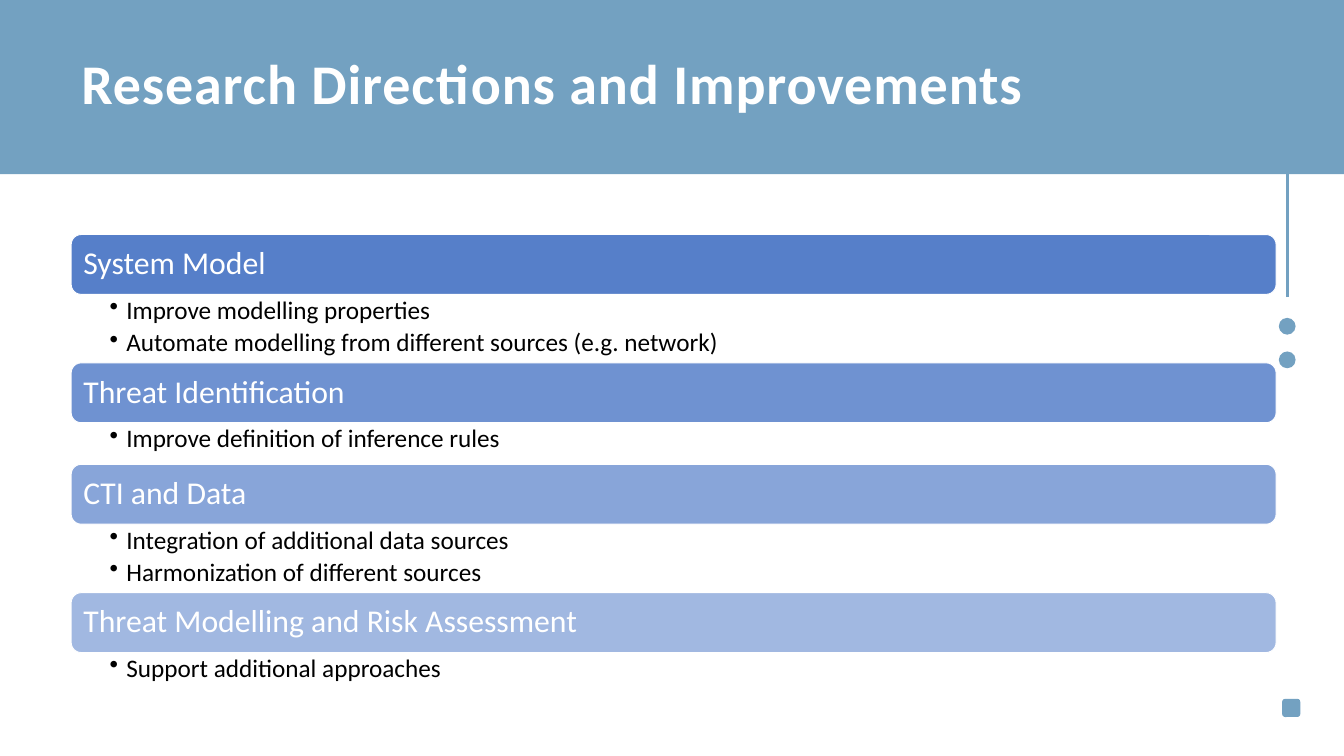
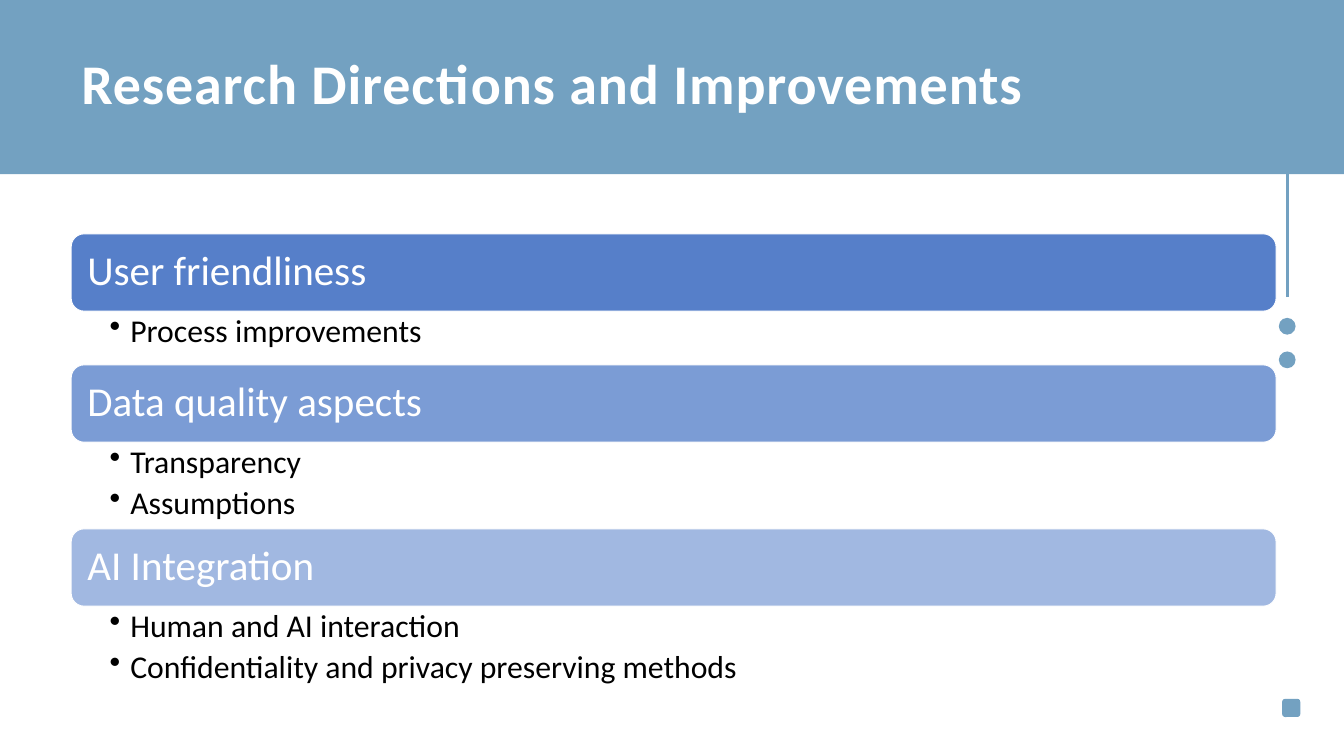
from dataclasses import dataclass

from lxml.etree import SubElement
from pptx import Presentation
from pptx.dml.color import RGBColor as RGB
from pptx.enum.shapes import MSO_CONNECTOR as CONN, MSO_SHAPE as SHAPE
from pptx.enum.text import MSO_ANCHOR as ANCHOR
from pptx.oxml.ns import qn
from pptx.util import Inches, Pt


@dataclass(frozen=True)
class Theme:
    font: str = "Calibri"
    accent: RGB = RGB(0x73, 0xA1, 0xC1)
    bar: RGB = RGB(0x44, 0x72, 0xC4)
    white: RGB = RGB(0xFF, 0xFF, 0xFF)
    black: RGB = RGB(0, 0, 0)
    title: int = 60


T = Theme()
LEFT, WIDTH = 1.06, 17.93
TITLE = "Research Directions and Improvements"

SLIDES = [
    dict(
        top=3.49, bar=0.89, head=34, body=27, edge=0.04, inset=0.14,
        body_inset=(0.57, 0.05, 0.26, 0.05), indent=0.25, heights={1: 0.62, 2: 1.02},
        sections=[
            ("System Model", ["Improve modelling properties",
                              "Automate modelling from different sources (e.g. network)"]),
            ("Threat Identification", ["Improve definition of inference rules"]),
            ("CTI and Data", ["Integration of additional data sources",
                              "Harmonization of different sources"]),
            ("Threat Modelling and Risk Assessment", ["Support additional approaches"]),
        ],
    ),
    dict(
        top=3.48, bar=1.15, head=44, body=34, edge=0.06, inset=0.18,
        body_inset=(0.57, 0.06, 0.34, 0.06), indent=0.31, heights={1: 0.8, 2: 1.29},
        sections=[
            ("User friendliness", ["Process improvements"]),
            ("Data quality aspects", ["Transparency", "Assumptions"]),
            ("AI Integration", ["Human and AI interaction",
                                "Confidentiality and privacy preserving methods"]),
        ],
    ),
]


def add_text(slide, lines, at, *, size, color, inset, after, anchor=ANCHOR.TOP,
             bold=False, spacing=None, indent=None):
    tf = slide.shapes.add_textbox(*map(Inches, at)).text_frame
    tf.word_wrap = True
    tf.vertical_anchor = anchor
    tf.margin_left, tf.margin_top, tf.margin_right, tf.margin_bottom = map(Inches, inset)
    for i, line in enumerate(lines):
        p = tf.paragraphs[0] if i == 0 else tf.add_paragraph()
        if indent:
            p.level = 1
            pPr = p._p.get_or_add_pPr()
            pPr.set("marL", str(Inches(indent)))
            pPr.set("indent", str(-Inches(indent)))
            SubElement(pPr, qn("a:buChar"), char="•")
        p.line_spacing = 0.9
        p.space_after = Pt(after)
        r = p.add_run()
        r.text = line
        r.font.name, r.font.size, r.font.bold = T.font, Pt(size), bold
        r.font.color.rgb = color
        if spacing:
            r._r.get_or_add_rPr().set("spc", str(spacing * 100))


def add_shape(slide, kind, at, color, *, alpha=None, line=None):
    s = slide.shapes.add_shape(kind, *map(Inches, at))
    s.shadow.inherit = False
    s.fill.solid()
    s.fill.fore_color.rgb = color
    if alpha is not None:
        clr = s._element.spPr.find(".//" + qn("a:srgbClr"))
        SubElement(clr, qn("a:alpha"), val=str(round(alpha * 1000)))
    if line is None:
        s.line.fill.background()
    else:
        s.line.color.rgb = line
        s.line.width = Pt(1)
    return s


prs = Presentation()
prs.slide_width, prs.slide_height = Inches(20), Inches(11.25)

for spec_ in SLIDES:
    slide = prs.slides.add_slide(prs.slide_layouts[6])
    y, bar, edge = spec_["top"], spec_["bar"], spec_["edge"]
    last = len(spec_["sections"]) - 1

    for i, (heading, points) in enumerate(spec_["sections"]):
        add_shape(slide, SHAPE.ROUNDED_RECTANGLE, (LEFT, y, WIDTH, bar), T.bar,
                  alpha=90 - 40 * i / last, line=T.white)
        add_text(slide, [heading], (LEFT + edge, y + edge, WIDTH - 2 * edge, bar - 2 * edge),
                 size=spec_["head"], color=T.white, inset=[spec_["inset"]] * 4,
                 after=0.35 * spec_["head"], anchor=ANCHOR.MIDDLE)
        y += bar
        height = spec_["heights"][len(points)]
        add_text(slide, points, (LEFT, y, WIDTH, height), size=spec_["body"], color=T.black,
                 inset=spec_["body_inset"], after=0.2 * spec_["body"], indent=spec_["indent"])
        y += height

    add_shape(slide, SHAPE.ROUNDED_RECTANGLE, (19.08, 10.4, 0.27, 0.27), T.accent)
    add_shape(slide, SHAPE.RECTANGLE, (0, 0, 20, 2.59), T.accent)
    add_text(slide, [TITLE], (LEFT, 0.57, 16.48, 1.44), size=T.title, color=T.white,
             inset=(0.15, 0.07, 0.15, 0.07), after=9, anchor=ANCHOR.MIDDLE, bold=True, spacing=1)

    rule = slide.shapes.add_connector(CONN.STRAIGHT, *map(Inches, (19.16, 4.42, 19.16, 0)))
    rule.line.color.rgb = T.accent
    rule.line.width = Pt(3)
    SubElement(rule._element.spPr, qn("a:effectLst"))
    for dot_top in (4.73, 5.23):
        add_shape(slide, SHAPE.OVAL, (19.03, dot_top, 0.25, 0.25), T.accent)

prs.save("out.pptx")
